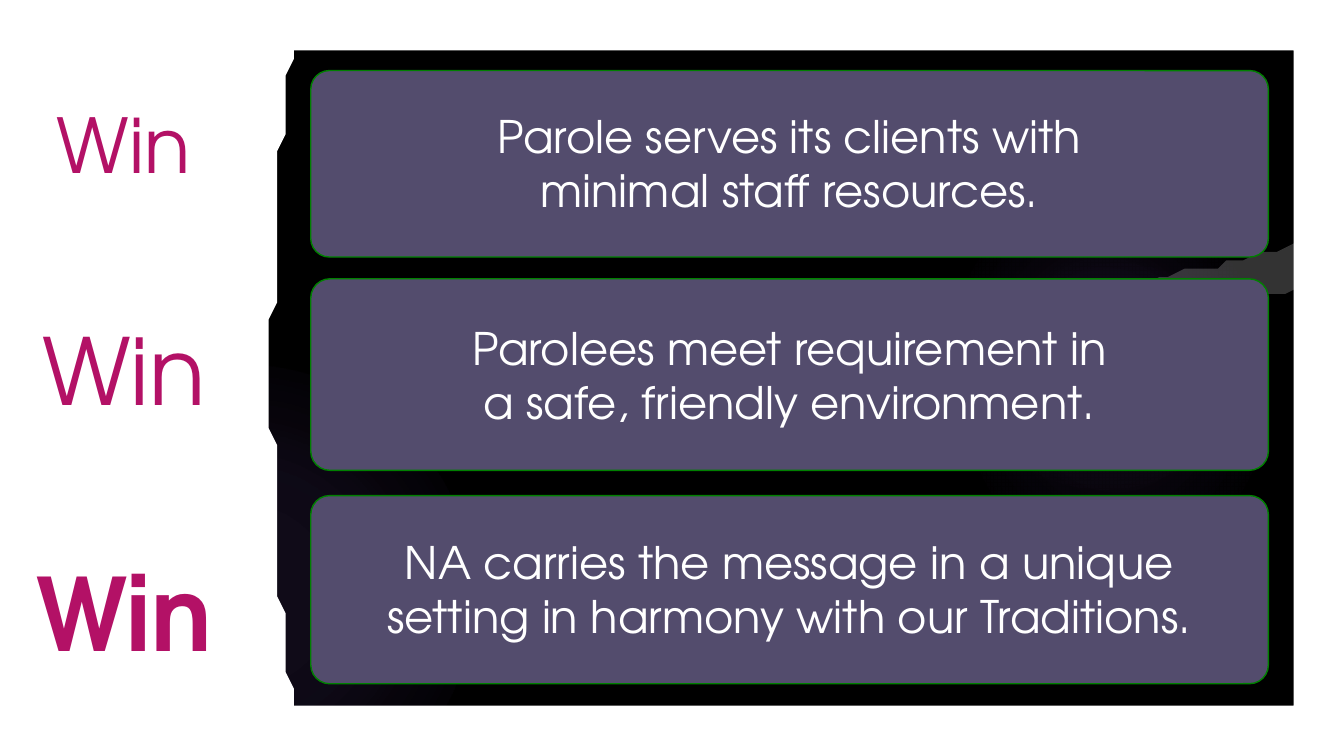
from math import comb
from lxml.etree import SubElement
from pptx import Presentation
from pptx.dml.color import RGBColor
from pptx.enum.shapes import MSO_SHAPE
from pptx.enum.text import MSO_ANCHOR, MSO_AUTO_SIZE, PP_ALIGN
from pptx.oxml.ns import qn
from pptx.util import Inches, Pt

COLORS = {"back": "000000", "white": "FFFFFF", "glow": "9B6BF2",
          "win": "B31166", "card": "534C6D", "edge": "008000"}
COLS, ROWS = 160, 90

# column, row, diameter, then (position %, opacity %) stops
GLOWS = [
    (112.9, 22, 37, [(0, 7), (36, 6), (69, 0), (100, 0)]),
    (1.4, 43.4, 55, [(0, 10), (36, 9), (75, 0), (100, 0)]),
    (1.4, 46.4, 31, [(0, 7), (36, 7), (72, 0), (100, 0)]),
    (114.4, 85.4, 13, [(0, 13), (36, 6), (66, 0), (100, 0)]),
    (114.4, 30.5, 37, [(0, 6), (36, 5), (69, 0), (100, 0)]),
    (106.3, 8.5, 21, [(0, 13), (36, 6), (73, 0), (100, 0)]),
]
# card row, card height, text row, text
CARDS = [
    (8.4, 22.2, 12.4, "Parole serves its clients with\vminimal staff resources."),
    (33.2, 22.8, 37.6, "Parolees meet requirement in\va safe, friendly environment."),
    (59, 22.4, 63.1, "NA carries the message in a unique setting "
                     "in harmony with our Traditions."),
]
WINS = [
    ({"size": Pt(54), "bold": False}, Pt(78)),
    ({"size": Pt(66), "bold": False}, Pt(78)),
    ({"size": Pt(72), "bold": True}, Pt(0)),
]


def rgb(name):
    return RGBColor.from_string(COLORS[name])


def bezier(points, steps=24):
    """Sample a Bezier curve of any degree."""
    n = len(points) - 1
    return [tuple(sum(comb(n, i) * (1 - t) ** (n - i) * t ** i * pt[axis]
                      for i, pt in enumerate(points)) for axis in (0, 1))
            for t in (k / steps for k in range(steps + 1))]


class Deck:
    font = "TeX Gyre Adventor"

    def __init__(self):
        self.prs = Presentation()
        self.prs.slide_width, self.prs.slide_height = Inches(13.33), Inches(7.5)
        self.col = self.prs.slide_width / COLS
        self.row = self.prs.slide_height / ROWS
        self.s = self.prs.slides.add_slide(self.prs.slide_layouts[5])
        fill = self.s.background.fill
        fill.solid()
        fill.fore_color.rgb = rgb("back")

    def box(self, x, y, w, h):
        return [round(v) for v in (x * self.col, y * self.row,
                                   w * self.col, h * self.row)]

    def paint(self, sp, color, line=None):
        sp.shadow.inherit = False
        sp.fill.solid()
        sp.fill.fore_color.rgb = rgb(color)
        if line:
            sp.line.color.rgb, sp.line.width = rgb(line), Pt(1)
        else:
            sp.line.fill.background()
        return sp

    def glow(self, x, y, size, stops):
        """Add a circle that fades out from its centre."""
        sp = self.s.shapes.add_shape(MSO_SHAPE.OVAL, *self.box(x, y, size, size))
        self.paint(sp, "glow")
        pr = sp._element.spPr
        solid = pr.find(qn("a:solidFill"))
        grad = pr.makeelement(qn("a:gradFill"), {"rotWithShape": "1"})
        pr.replace(solid, grad)
        gs_list = SubElement(grad, qn("a:gsLst"))
        for pos, opacity in stops:
            gs = SubElement(gs_list, qn("a:gs"), pos=str(pos * 1000))
            clr = SubElement(gs, qn("a:srgbClr"), val=COLORS["glow"])
            SubElement(clr, qn("a:alpha"), val=str(opacity * 1000))
        circle = SubElement(grad, qn("a:path"), {"path": "circle"})
        SubElement(circle, qn("a:fillToRect"),
                   {side: "50000" for side in "ltrb"})

    def outline(self, *contours, color="white", opacity=None):
        """Fill closed contours; a second one cuts a hole."""
        first, *holes = contours
        fb = self.s.shapes.build_freeform(*first[0], scale=(self.col, self.row))
        fb.add_line_segments(first[1:])
        for hole in holes:
            fb.move_to(*hole[0])
            fb.add_line_segments(hole[1:])
        sp = self.paint(fb.convert_to_shape(), color)
        if opacity:
            clr = sp._element.spPr.find(qn("a:solidFill"))[0]
            SubElement(clr, qn("a:alpha"), val=str(opacity * 1000))

    def set_text(self, p, text, color, **font):
        p.text, p.alignment = text, PP_ALIGN.CENTER
        for r in p.runs:
            r.font.color.rgb = rgb(color)
            for key, value in {"name": self.font, **font}.items():
                setattr(r.font, key, value)

    def title(self, x, y, w, h, lines):
        sp = self.s.shapes.title
        self.s.shapes._spTree.append(sp._element)  # in front of the backdrop
        sp.left, sp.top, sp.width, sp.height = self.box(x, y, w, h)
        tf = sp.text_frame
        tf.auto_size, tf.vertical_anchor = MSO_AUTO_SIZE.NONE, MSO_ANCHOR.MIDDLE
        for i, (font, after) in enumerate(lines):
            p = tf.add_paragraph() if i else tf.paragraphs[0]
            self.set_text(p, "Win", "win", **font)
            for key, value in {"line_spacing": 1.14, "space_before": Pt(0),
                               "space_after": after}.items():
                setattr(p, key, value)

    def card(self, x, y, w, h):
        sp = self.s.shapes.add_shape(MSO_SHAPE.ROUNDED_RECTANGLE,
                                     *self.box(x, y, w, h))
        sp.adjustments[0] = 0.1
        self.paint(sp, "card", "edge")

    def text(self, x, y, w, h, text):
        tf = self.s.shapes.add_textbox(*self.box(x, y, w, h)).text_frame
        tf.word_wrap, tf.auto_size = True, MSO_AUTO_SIZE.SHAPE_TO_FIT_TEXT
        self.set_text(tf.paragraphs[0], text, "white", size=Pt(32))


def main():
    deck = Deck()
    for glow in GLOWS:
        deck.glow(*glow)
    swoosh_top = bezier([(112.9, 37.7), (134.1, 35.3), (155.3, 28.4)])
    swoosh_base = bezier([(113.5, 38.5), (120.8, 38.8), (145.7, 36), (156.1, 34.1)])
    deck.outline(swoosh_base + swoosh_top[::-1], opacity=20)
    side_curve = bezier([(35.4, 0), (29.4, 44.4), (35.4, 88.8)], 40)
    deck.outline([(0, 0), *side_curve, (0, 88.8)])
    deck.outline([(0, -0.1), (0, 89.8), (160, 89.8), (160, -0.1)],
                 [(6.2, 83.5), (6.2, 6), (153.7, 6), (153.7, 83.5)])
    deck.title(0, 10.56, 29.5, 69, WINS)
    for y, h, _, _ in CARDS:
        deck.card(37, y, 114, h)
    for _, _, y, words in CARDS:
        deck.text(40, y, 108, 14.2, words)
    deck.prs.save("out.pptx")


if __name__ == "__main__":
    main()
